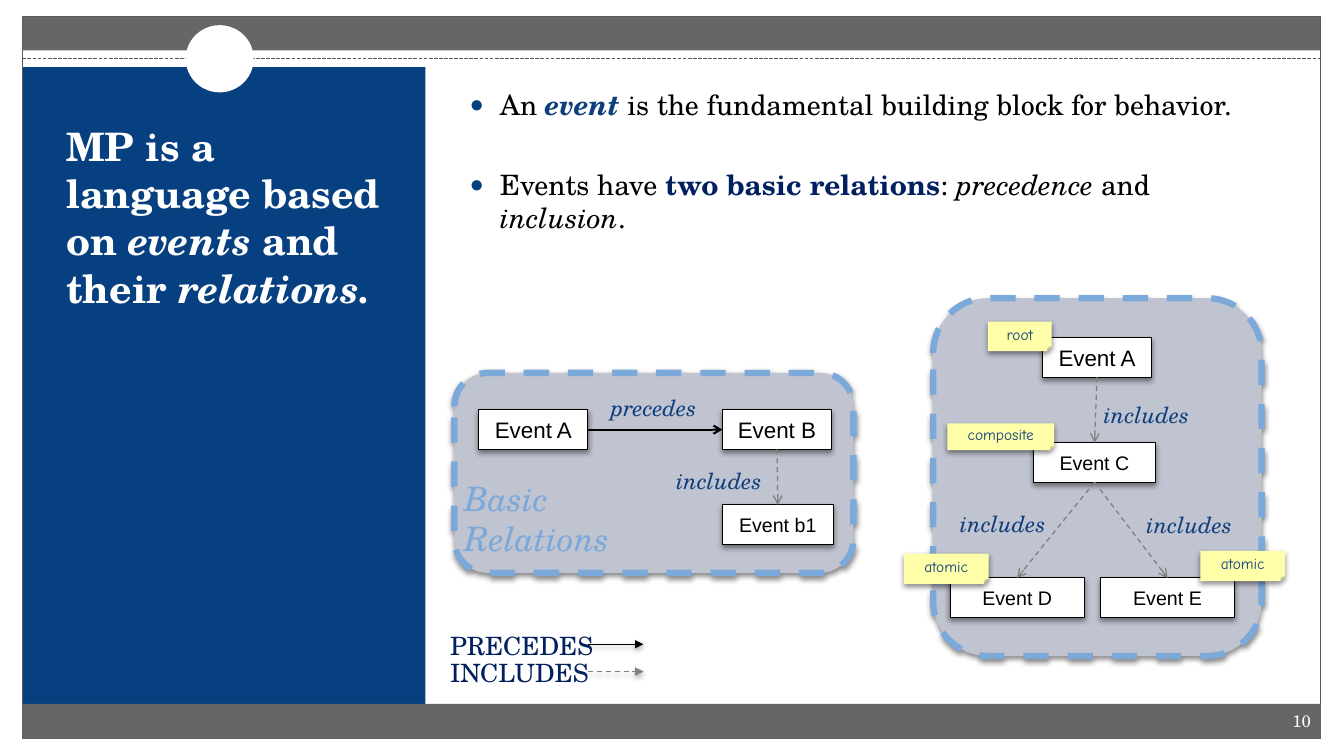
from collections import namedtuple
from lxml.etree import SubElement
from pptx import Presentation
from pptx.dml.color import RGBColor
from pptx.enum.dml import MSO_LINE
from pptx.enum.shapes import MSO_CONNECTOR, MSO_SHAPE
from pptx.enum.text import MSO_ANCHOR, MSO_AUTO_SIZE, PP_ALIGN
from pptx.oxml.ns import qn
from pptx.util import Emu, Pt

COLS, ROWS, CELL = 160, 90, 76200
SERIF, SANS, HAND = "TeX Gyre Schola", "Arial", "Comic Neue"
WHITE, BLACK, GREY, DARK = "FFFFFF", "000000", "808080", "666666"
BLUE, INK, NAVY, SKY = "074080", "0F3E7C", "002060", "7AA9DA"
MIST, LEMON, EDGE = "C0C3D0", "FFFFAA", "5A5A5A"
Box = namedtuple("Box", "x y w h")


def hue(code):
    return RGBColor.from_string(code)


def grid(*cells):
    return [Emu(round(cell * CELL)) for cell in cells]


def part(box, x, y, w, h):
    return Box(box.x + x, box.y + y, w, h)


def add_run(para, text, size, color, face=SERIF, bold=False, slant=False):
    run = para.add_run()
    run.text = text
    font = run.font
    font.name, font.size, font.bold, font.italic = face, Pt(size), bold, slant
    font.color.rgb = hue(color)


def cast(effects, alpha=45):
    shade = SubElement(effects, qn("a:outerShdw"), blurRad=str(Pt(4)),
                       dist=str(Pt(2)), dir="5400000", rotWithShape="0")
    tint = SubElement(shade, qn("a:srgbClr"), val=BLACK)
    SubElement(tint, qn("a:alpha"), val=str(alpha * 1000))


def add_form(slide, kind, box, fill=None, line=None, width=0.75, shade=False):
    form = slide.shapes.add_shape(kind, *grid(*box))
    form.shadow.inherit = False
    if shade:
        cast(form.element.spPr.find(qn("a:effectLst")))
    if fill:
        form.fill.solid()
        form.fill.fore_color.rgb = hue(fill)
    else:
        form.fill.background()
    if line:
        form.line.color.rgb = hue(line)
        form.line.width = Pt(width)
    else:
        form.line.fill.background()
    return form


def add_line(slide, start, end, color, width=0.9, dash=None, tip=None, shade=False):
    link = slide.shapes.add_connector(MSO_CONNECTOR.STRAIGHT, *grid(*start, *end))
    link.line.color.rgb = hue(color)
    link.line.width = Pt(width)
    if dash:
        link.line.dash_style = dash
    frame = link.element.spPr
    if tip:
        SubElement(frame.find(qn("a:ln")), qn("a:tailEnd"), type=tip)
    effects = SubElement(frame, qn("a:effectLst"))
    if shade:
        cast(effects, 35)
    return link


def join(slide, first, side, last, goal, color=GREY, width=0.9, dash=MSO_LINE.DASH):
    link = add_line(slide, (0, 0), (1, 1), color, width, dash, "arrow")
    link.begin_connect(first, side)
    link.end_connect(last, goal)


def add_label(slide, box, text, size, color, slant=False, wrap=True):
    label = slide.shapes.add_textbox(*grid(*box))
    label.text_frame.word_wrap = wrap
    add_run(label.text_frame.paragraphs[0], text, size, color, slant=slant)
    return label


def add_role(slide, box, x, y, text):
    add_label(slide, part(box, x, y, 13.1, 4.4), text, 16, INK, True, False)


def fill_mid(form, text, size, color, face):
    form.text_frame.word_wrap = True
    form.text_frame.vertical_anchor = MSO_ANCHOR.MIDDLE
    para = form.text_frame.paragraphs[0]
    para.alignment = PP_ALIGN.CENTER
    add_run(para, text, size, color, face)


def add_event(slide, box, x, y, w, text, size):
    form = add_form(slide, MSO_SHAPE.ROUNDED_RECTANGLE, part(box, x, y, w, 4.7),
                    WHITE, BLACK, shade=True)
    form.adjustments[0] = 0
    fill_mid(form, text, size, BLACK, SANS)
    return form


def add_note(slide, box, x, y, w, h, text):
    form = add_form(slide, MSO_SHAPE.FOLDED_CORNER, part(box, x, y, w, h),
                    LEMON, shade=True)
    fill_mid(form, text, 11, INK, HAND)


def add_panel(slide, box):
    form = add_form(slide, MSO_SHAPE.ROUNDED_RECTANGLE, box, MIST, SKY, 4.5, True)
    form.line.dash_style = MSO_LINE.DASH


def draw_frame(slide, box):
    rect = MSO_SHAPE.RECTANGLE
    add_form(slide, rect, part(box, 0, 0, box.w, 4), DARK)
    add_form(slide, rect, part(box, 0, 6, 48, 77), BLUE)
    add_form(slide, rect, box, line=EDGE)
    add_line(slide, (box.x, box.y + 5), (box.x + box.w, box.y + 5), EDGE,
             dash=MSO_LINE.SQUARE_DOT)
    add_form(slide, MSO_SHAPE.OVAL, part(box, 19.44, 1, 8.1, 8), WHITE)
    add_form(slide, rect, part(box, 0, box.h - 4.1, box.w, 4.1), DARK)
    page = add_label(slide, part(box, box.w - 14.8, box.h - 4.5, 14.8, 4.8),
                     "10", 12, WHITE)
    page.text_frame.vertical_anchor = MSO_ANCHOR.MIDDLE
    page.text_frame.paragraphs[0].alignment = PP_ALIGN.RIGHT


def place(holder, box):
    holder.left, holder.top, holder.width, holder.height = grid(*box)
    holder.element.getparent().append(holder.element)
    frame = holder.text_frame
    frame.word_wrap = True
    frame.auto_size = MSO_AUTO_SIZE.NONE
    frame.vertical_anchor = MSO_ANCHOR.TOP
    return frame


def write_title(slide, box):
    para = place(slide.shapes.title, box).paragraphs[0]
    para.alignment = PP_ALIGN.LEFT
    for text, slant in (("MP is a language based on ", False), ("events", True),
                        (" and their ", False), ("relations.", True)):
        add_run(para, text, 28, WHITE, bold=True, slant=slant)


def write_list(slide, box):
    frame = place(slide.placeholders[1], box)
    points = (
        (("An ", BLACK, False, False), ("event ", INK, True, True),
         ("is the fundamental building block for behavior.", BLACK, False, False)),
        (("Events have ", BLACK, False, False),
         ("two basic relations", NAVY, True, False), (": ", BLACK, False, False),
         ("precedence", BLACK, False, True), (" and ", BLACK, False, False),
         ("inclusion", BLACK, False, True), (".", BLACK, False, False)),
    )
    for rank, point in enumerate(points):
        para = frame.add_paragraph() if rank else frame.paragraphs[0]
        para.space_before = Pt(33 * rank)
        props = para._p.get_or_add_pPr()
        indent = grid(3.6)[0]
        props.set("marL", str(indent))
        props.set("indent", str(-indent))
        SubElement(SubElement(props, qn("a:buClr")), qn("a:srgbClr"), val=BLUE)
        SubElement(props, qn("a:buSzPct"), val="85000")
        SubElement(props, qn("a:buChar"), char="●")
        for text, color, bold, slant in point:
            add_run(para, text, 20, color, bold=bold, slant=slant)


def draw_basics(slide, box):
    add_panel(slide, box)
    add_role(slide, box, 17.4, 1.9, "precedes")
    add_role(slide, box, 25.2, 10.6, "includes")
    first = add_event(slide, box, 2.9, 4.4, 13, "Event A", 16)
    inner = add_event(slide, box, 31.9, 15.7, 13.2, "Event b1", 14)
    second = add_event(slide, box, 31.9, 4.4, 13, "Event B", 16)
    join(slide, first, 3, second, 1, BLACK, 1.5, None)
    join(slide, second, 2, inner, 0)
    add_label(slide, part(box, 0, 11.9, 21.1, 10.9), "Basic Relations", 24, SKY, True)


def draw_tree(slide, box):
    add_panel(slide, box)
    root = add_event(slide, box, 13, 4.7, 13, "Event A", 16)
    mid = add_event(slide, box, 11.9, 17.2, 14.6, "Event C", 14)
    join(slide, root, 2, mid, 0)
    for x, text in ((2, "Event D"), (19.9, "Event E")):
        join(slide, mid, 2, add_event(slide, box, x, 33.3, 16, text, 14), 0)
    for x, y in ((19.1, 11.6), (2, 24.6), (24.2, 24.8)):
        add_role(slide, box, x, y, "includes")
    for note in ((6.5, 2.8, 7.6, 3.5, "root"), (1.7, 14.9, 12.7, 3.2, "composite"),
                 (-3.5, 30.4, 10.1, 3.6, "atomic"), (31.8, 30.1, 10.1, 3.6, "atomic")):
        add_note(slide, box, *note)


def draw_key(slide, box):
    step = box.h / 2
    for rank, (text, color, dash) in enumerate((("PRECEDES", BLACK, None),
                                                ("INCLUDES", GREY, MSO_LINE.DASH))):
        row = part(box, 0, rank * step, 19.7, 4.8)
        add_label(slide, row, text, 18, NAVY)
        add_line(slide, (row.x + 17.6, row.y + 2.3), (row.x + box.w, row.y + 2.3),
                 color, dash=dash, tip="triangle", shade=True)


def main():
    deck = Presentation()
    deck.slide_width, deck.slide_height = grid(COLS, ROWS)
    slide = deck.slides.add_slide(deck.slide_layouts[1])
    draw_frame(slide, Box(2.66, 2, 154.6, 85.9))
    write_title(slide, Box(6.7, 14, 41.3, 40.9))
    write_list(slide, Box(54.7, 9.8, 98.6, 71.3))
    draw_basics(slide, Box(54.1, 44.4, 47.5, 23.8))
    draw_tree(slide, Box(111.1, 35.5, 39.1, 42.6))
    draw_key(slide, Box(52.4, 74.4, 24.2, 6.5))
    deck.save("out.pptx")


if __name__ == "__main__":
    main()
